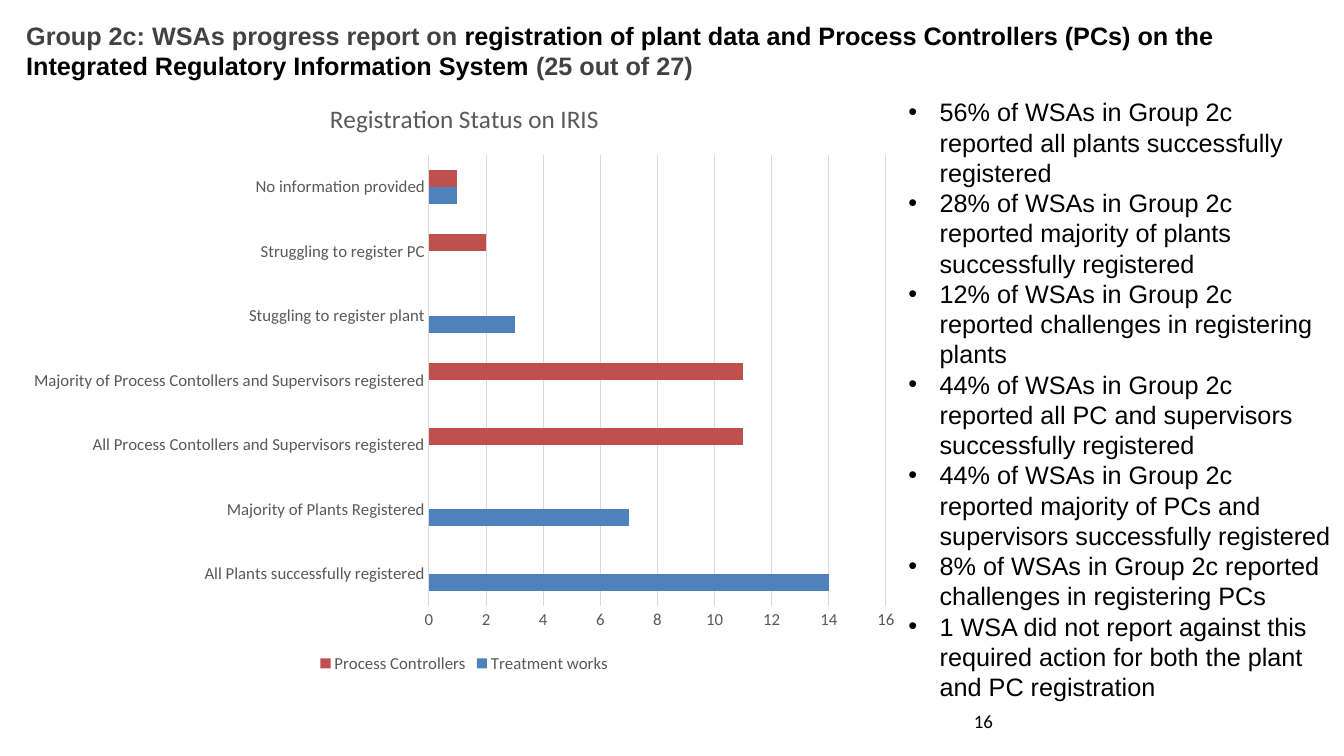
from lxml import etree
from pptx import Presentation
from pptx import util as u
from pptx.chart.data import CategoryChartData
from pptx.dml.color import RGBColor
from pptx.enum import chart as ch, text
from pptx.oxml import ns

COLORS = {"white": "FFFFFF", "black": "000000", "heading": "424242", "label": "595959",
          "grid": "D9D9D9", "works": "4F81BD", "controllers": "C0504D"}

HEADING = [("Group 2c: WSAs progress report on ", "heading"),
           ("registration of plant data and Process Controllers (PCs) on the "
            "Integrated Regulatory Information System ", "black"),
           ("(25 out of 27)", "heading")]

FINDINGS = [
    "56% of WSAs in Group 2c reported all plants successfully registered",
    "28% of WSAs in Group 2c reported majority of plants successfully registered",
    "12% of WSAs in Group 2c reported challenges in registering plants",
    "44% of WSAs in Group 2c reported all PC and supervisors successfully registered",
    "44% of WSAs in Group 2c reported majority of PCs and supervisors successfully registered",
    "8% of WSAs in Group 2c reported challenges in registering PCs",
    "1 WSA did not report against this required action for both the plant and PC registration",
]

# Status: (treatment works, process controllers)
STATUSES = {
    "All Plants successfully registered": (14, None),
    "Majority of Plants Registered": (7, None),
    "All Process Contollers and Supervisors registered": (None, 11),
    "Majority of Process Contollers and Supervisors registered": (None, 11),
    "Stuggling to register plant": (3, None),
    "Struggling to register PC": (None, 2),
    "No information provided": (1, 1),
}
SERIES = [("Treatment works", "works"), ("Process Controllers", "controllers")]


def rgb(name):
    return RGBColor.from_string(COLORS[name])


class ProgressSlide:
    """Holds the text styles and the current slide."""
    heading_style = {"name": "Arial", "size": u.Pt(18), "bold": True}
    body_style = {"name": "Arial", "size": u.Pt(18), "bold": False}
    number_style = {"name": "Calibri", "size": u.Pt(13.5)}
    chart_title_style = {"name": "Calibri", "size": u.Pt(18), "bold": False}
    label_style = {"name": "Calibri", "size": u.Pt(12), "bold": False}

    def __init__(self, deck):
        self.slide = deck.slides.add_slide(deck.slide_layouts[1])

    def style(self, font, values, color):
        for key, value in values.items():
            setattr(font, key, value)
        font.color.rgb = rgb(color)

    def place(self, holder, box, anchor):
        for key, length in zip(("left", "top", "width", "height"), box):
            setattr(holder, key, u.Inches(length))
        frame = holder.text_frame
        frame.word_wrap = True
        frame.auto_size = text.MSO_AUTO_SIZE.NONE
        frame.vertical_anchor = anchor
        return frame

    def heading(self, parts, box):
        title = self.slide.shapes.title
        title.fill.solid()
        title.fill.fore_color.rgb = rgb("white")
        line = self.place(title, box, text.MSO_ANCHOR.TOP).paragraphs[0]
        line.alignment = text.PP_ALIGN.LEFT
        for words, color in parts:
            run = line.add_run()
            run.text = words
            self.style(run.font, self.heading_style, color)

    def bullets(self, items, box):
        frame = self.place(self.slide.placeholders[1], box, text.MSO_ANCHOR.TOP)
        frame.text = "\n".join(items)
        for item in frame.paragraphs:
            props = item._p.get_or_add_pPr()
            props.set("marL", str(u.Inches(0.31)))
            props.set("indent", str(u.Inches(-0.31)))
            etree.SubElement(props, ns.qn("a:buFont")).set("typeface", "Arial")
            etree.SubElement(props, ns.qn("a:buChar")).set("char", "•")
            item.space_before = item.space_after = u.Pt(0)
            self.style(item.font, self.body_style, "black")

    def page_number(self, number, box):
        label = self.slide.shapes.add_textbox(*map(u.Inches, box))
        frame = self.place(label, box, text.MSO_ANCHOR.MIDDLE)
        frame.text = number
        self.style(frame.paragraphs[0].runs[0].font, self.number_style, "black")

    def bar_chart(self, heading, box):
        data = CategoryChartData()
        data.categories = list(STATUSES)
        for (name, _), values in zip(SERIES, zip(*STATUSES.values())):
            data.add_series(name, values)
        chart = self.slide.shapes.add_chart(
            ch.XL_CHART_TYPE.BAR_CLUSTERED, *map(u.Inches, box), data).chart
        self.style(chart.font, self.label_style, "label")

        # Title and legend
        chart.has_title = True
        chart.chart_title.include_in_layout = False
        title = chart.chart_title.text_frame
        title.text = heading
        self.style(title.paragraphs[0].runs[0].font, self.chart_title_style, "label")
        chart.has_legend = True
        chart.legend.position = ch.XL_LEGEND_POSITION.BOTTOM
        chart.legend.include_in_layout = False
        self.style(chart.legend.font, self.label_style, "label")

        # Bars
        plot = chart.plots[0]
        plot.gap_width = 182
        plot.overlap = 0
        plot.vary_by_categories = False
        for series, (_, color) in zip(plot.series, SERIES):
            series.format.fill.solid()
            series.format.fill.fore_color.rgb = rgb(color)

        # Axes
        statuses, counts = chart.category_axis, chart.value_axis
        for axis in (statuses, counts):
            axis.major_tick_mark = axis.minor_tick_mark = ch.XL_TICK_MARK.NONE
            self.style(axis.tick_labels.font, self.label_style, "label")
        counts.format.line.fill.background()
        counts.has_major_gridlines = True
        for line in (statuses.format.line, counts.major_gridlines.format.line):
            line.color.rgb = rgb("grid")
            line.width = u.Pt(0.75)


def main():
    deck = Presentation()
    deck.slide_width, deck.slide_height = u.Inches(13.33), u.Inches(7.5)
    page = ProgressSlide(deck)
    page.page_number("16", (9.56, 6.95, 3.11, 0.4))
    page.heading(HEADING, (0.16, 0.15, 12.7, 0.71))
    page.bar_chart("Registration Status on IRIS", (0.16, 0.79, 8.89, 5.93))
    page.bullets(FINDINGS, (8.91, 0.91, 4.4, 6.46))
    deck.save("out.pptx")


if __name__ == "__main__":
    main()
